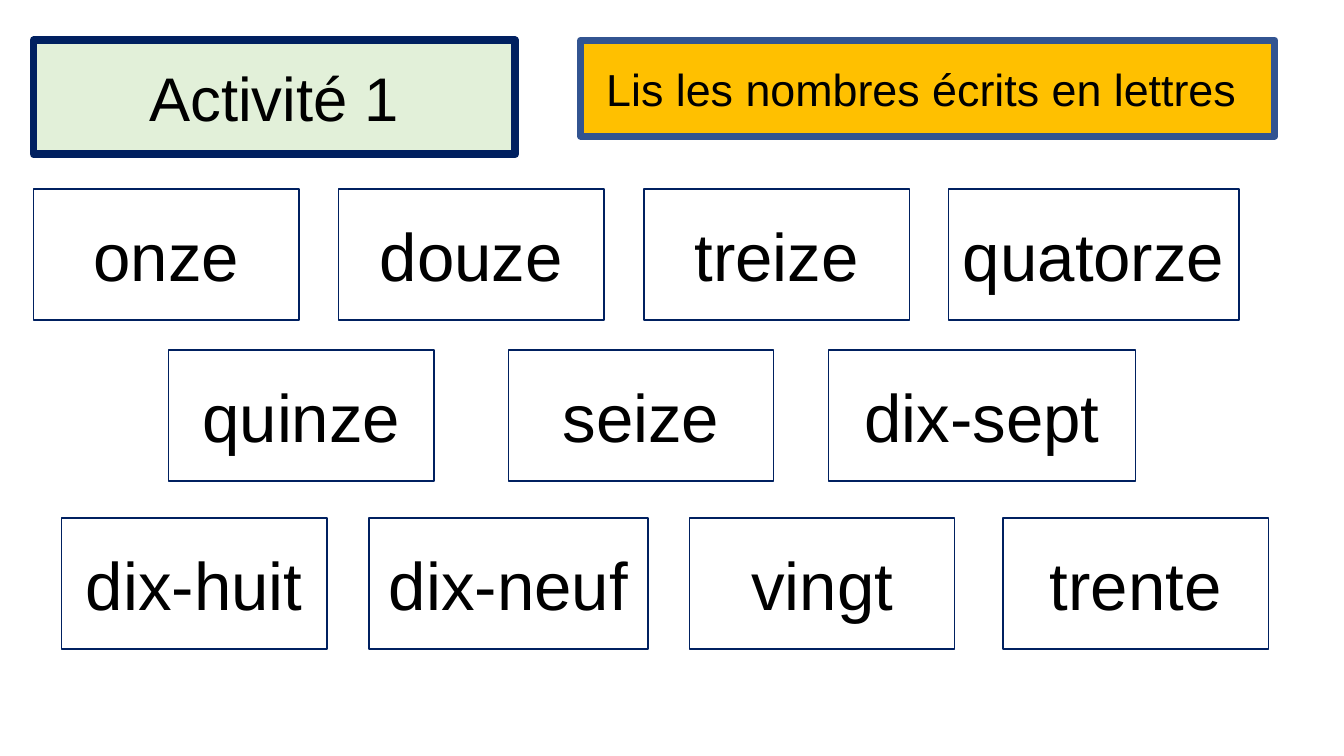
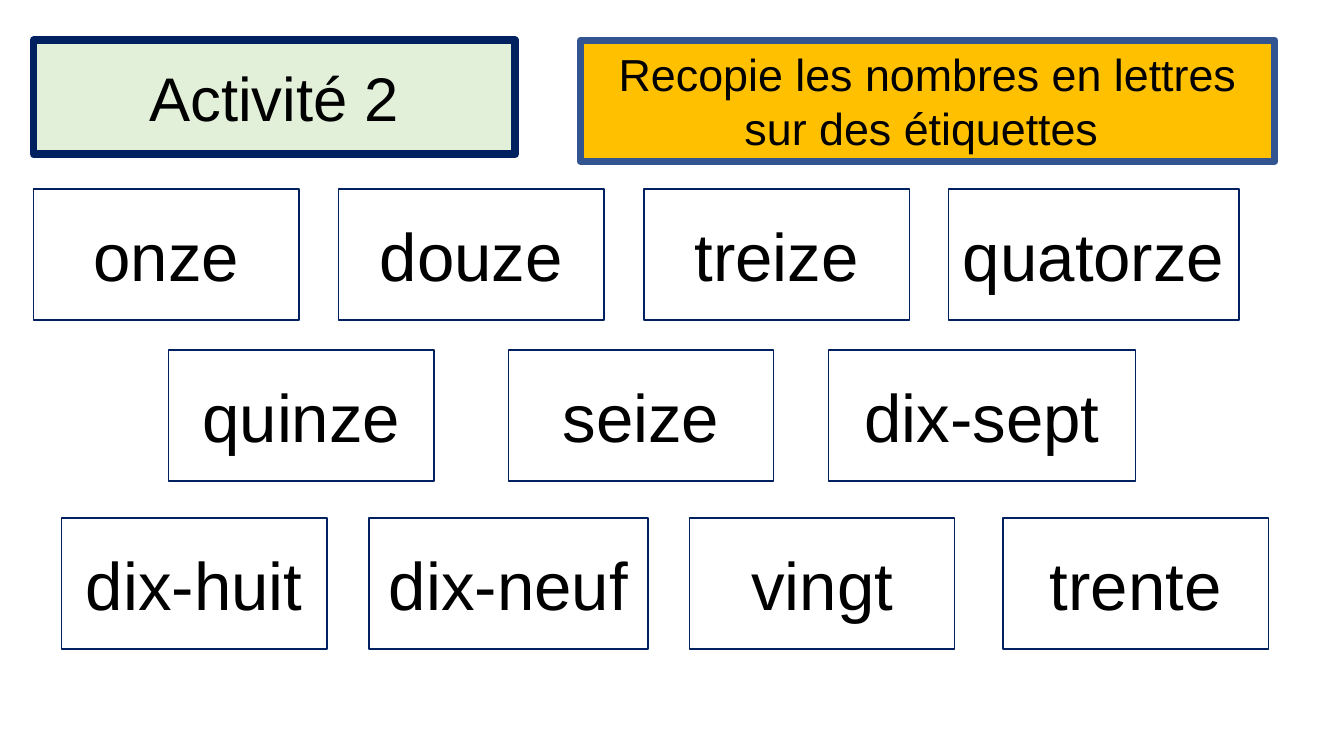
from dataclasses import dataclass

from lxml import etree
from pptx import Presentation
from pptx.dml.color import RGBColor
from pptx.enum.shapes import MSO_SHAPE
from pptx.enum.text import MSO_ANCHOR, MSO_AUTO_SIZE, PP_ALIGN
from pptx.oxml.ns import qn
from pptx.util import Pt

RECTANGLE = MSO_SHAPE.RECTANGLE
MIDDLE = MSO_ANCHOR.MIDDLE
CENTER = PP_ALIGN.CENTER
NO_AUTOFIT = MSO_AUTO_SIZE.NONE
TITLE_ONLY = 5


@dataclass(frozen=True)
class Theme:
    font: str = "Arial"
    ink: str = "000000"
    navy: str = "002060"
    blue: str = "325491"
    amber: str = "FFC000"
    mint: str = "E2F0D9"
    white: str = "FFFFFF"
    title_size: float = 44
    instruction_size: float = 32
    number_size: float = 48


THEME = Theme()

# Heading, instruction, height of the instruction band
ACTIVITIES = [
    ("Activité 1", "Lis les nombres écrits en lettres ", 68.4),
    ("Activité 2", "Recopie les nombres en lettres sur des étiquettes ", 86.4),
]

# Top of each row, then the left edge and number word of each card
NUMBER_ROWS = [
    (135, [(24, "onze"), (242, "douze"), (460, "treize"), (677.5, "quatorze")]),
    (250, [(120.5, "quinze"), (363, "seize"), (592, "dix-sept")]),
    (370, [(44, "dix-huit"), (263.5, "dix-neuf"), (492.5, "vingt"), (716.5, "trente")]),
]
CARD_WIDTH, CARD_HEIGHT = 189.5, 93.6
WIDE_CARDS = {"quatorze": 207.5, "dix-sept": 219, "dix-neuf": 199.5}

SLIDE_SIZE = (960, 540)
TITLE_BOX = (24, 28.8, 344, 81.4)
BAND_LEFT, BAND_TOP, BAND_WIDTH = 414.7, 28.8, 496


def write(shape, text, *, size, color=THEME.ink):
    frame = shape.text_frame
    frame.word_wrap = True
    frame.auto_size = NO_AUTOFIT
    frame.vertical_anchor = MIDDLE
    paragraph = frame.paragraphs[0]
    paragraph.text = text
    paragraph.alignment = CENTER
    paragraph.font.name = THEME.font
    paragraph.font.size = Pt(size)
    paragraph.font.color.rgb = RGBColor.from_string(color)


def paint(shape, *, fill, line, weight):
    shape.fill.solid()
    shape.fill.fore_color.rgb = RGBColor.from_string(fill)
    shape.line.color.rgb = RGBColor.from_string(line)
    shape.line.width = Pt(weight)


def add_box(slide, box, text, *, size, fill, line, weight):
    shape = slide.shapes.add_shape(RECTANGLE, *map(Pt, box))
    shape.shadow.inherit = False
    paint(shape, fill=fill, line=line, weight=weight)
    write(shape, text, size=size)


def set_title(slide, text):
    """Turn the title placeholder into the oval activity heading."""
    title = slide.shapes.title
    title.left, title.top, title.width, title.height = map(Pt, TITLE_BOX)
    oval = etree.SubElement(title.element.spPr, qn("a:prstGeom"), prst="ellipse")
    etree.SubElement(oval, qn("a:avLst"))
    paint(title, fill=THEME.mint, line=THEME.navy, weight=5.5)
    write(title, text, size=THEME.title_size)


def add_number_cards(slide):
    for top, cards in NUMBER_ROWS:
        for left, word in cards:
            width = WIDE_CARDS.get(word, CARD_WIDTH)
            add_box(slide, (left, top, width, CARD_HEIGHT), word,
                    size=THEME.number_size, fill=THEME.white,
                    line=THEME.navy, weight=1)


def main():
    deck = Presentation()
    deck.slide_width, deck.slide_height = map(Pt, SLIDE_SIZE)
    for heading, instruction, band_height in ACTIVITIES:
        slide = deck.slides.add_slide(deck.slide_layouts[TITLE_ONLY])
        set_title(slide, heading)
        add_box(slide, (BAND_LEFT, BAND_TOP, BAND_WIDTH, band_height), instruction,
                size=THEME.instruction_size, fill=THEME.amber,
                line=THEME.blue, weight=5)
        add_number_cards(slide)
    deck.save("out.pptx")


if __name__ == "__main__":
    main()
